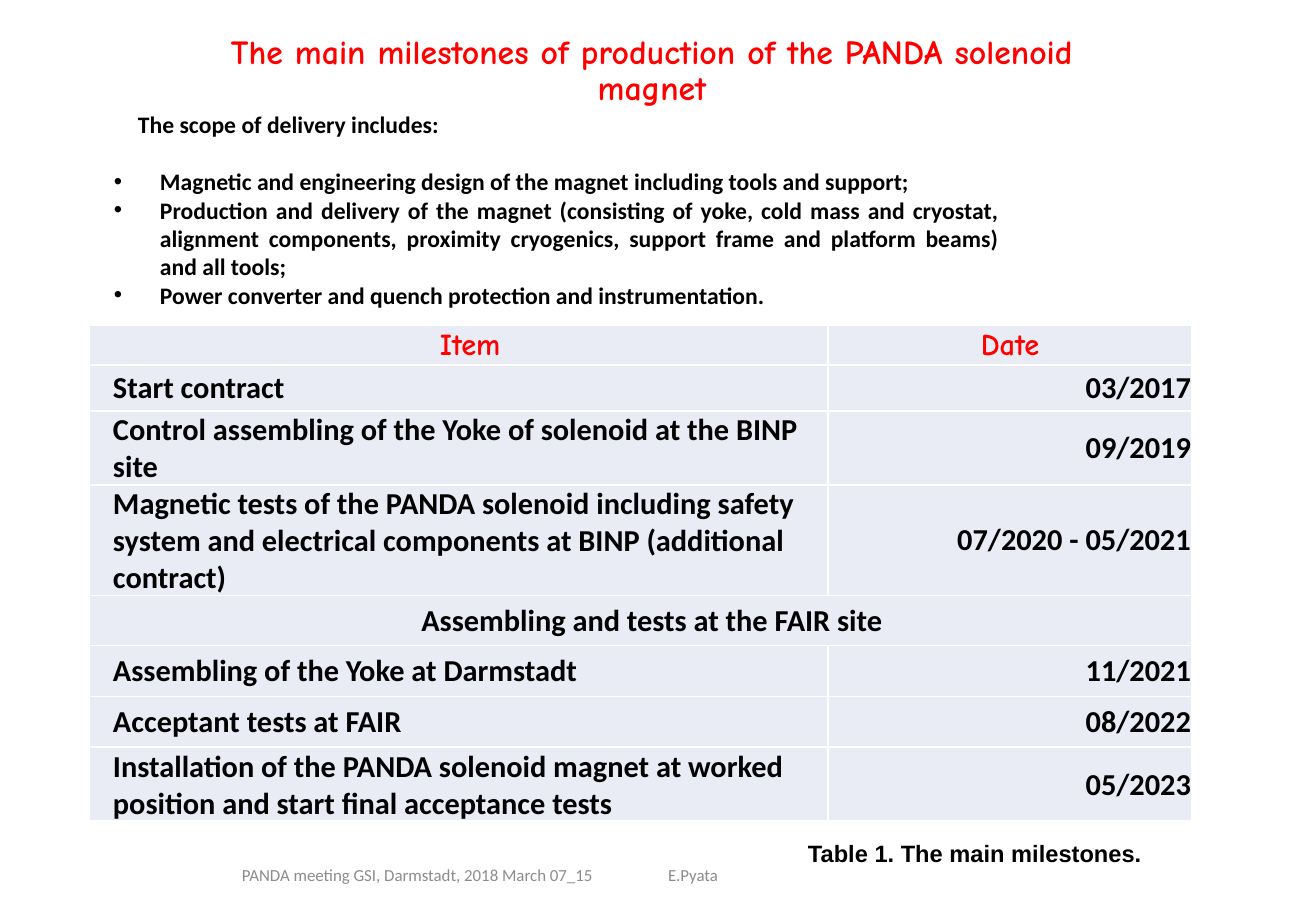
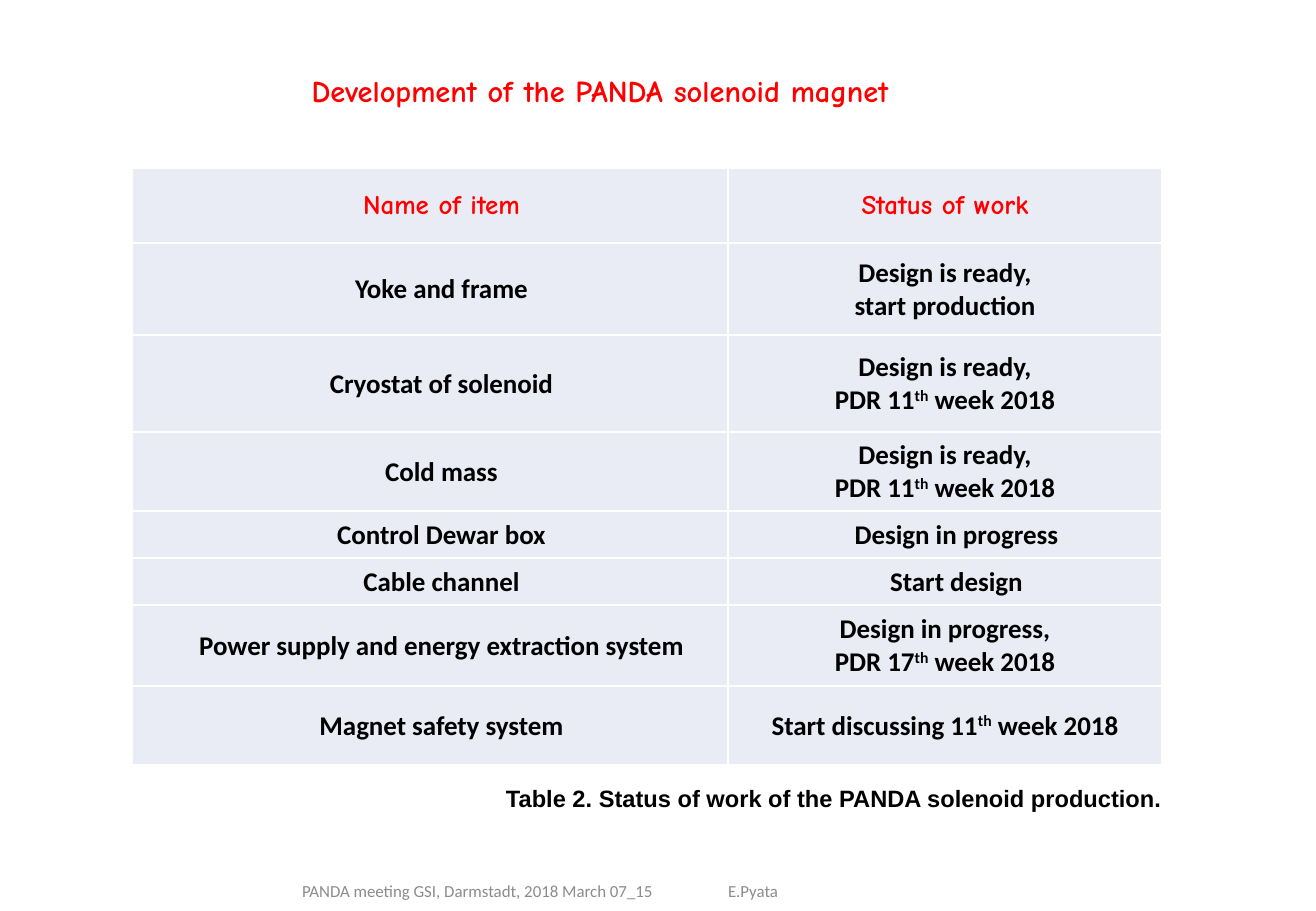
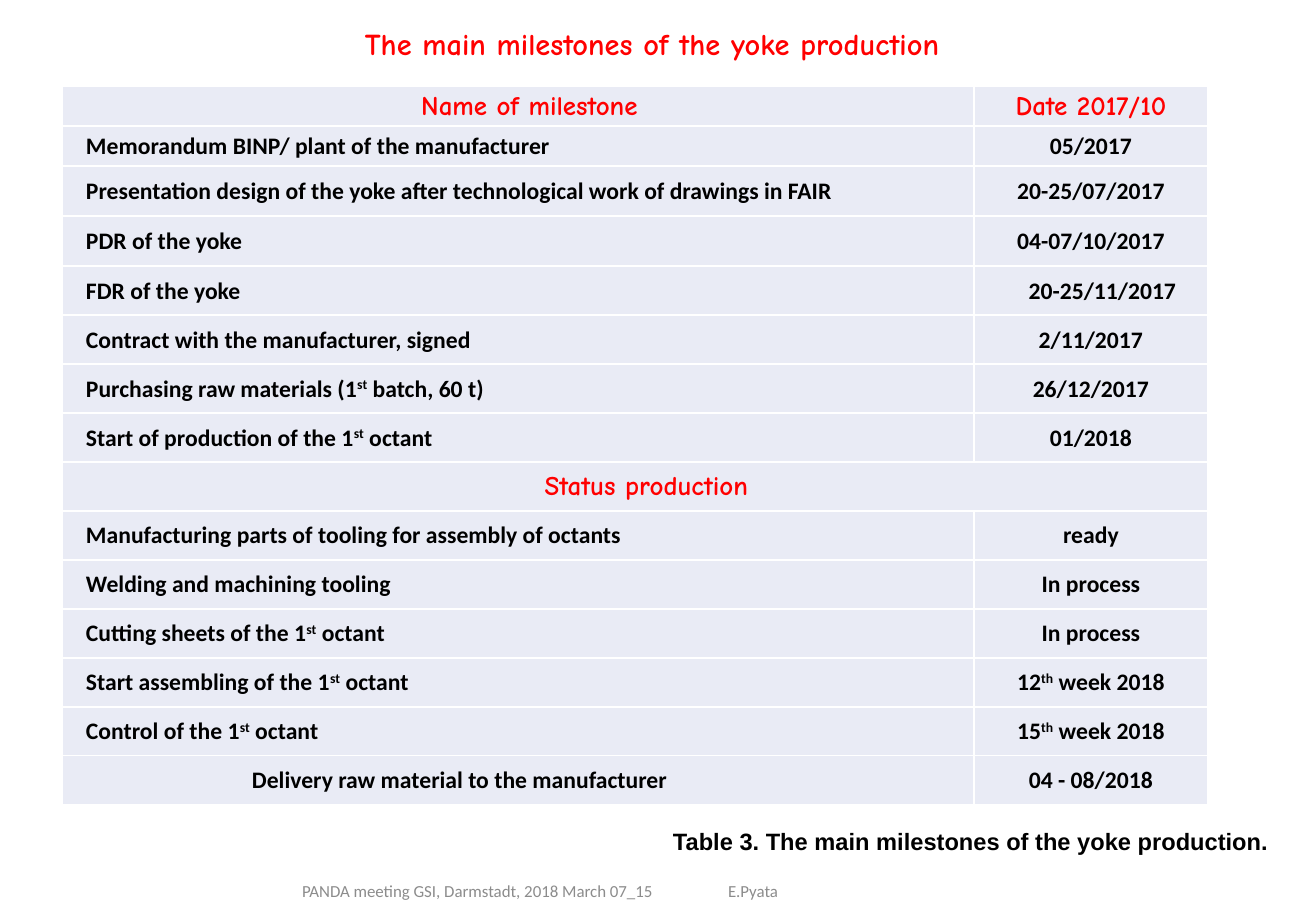
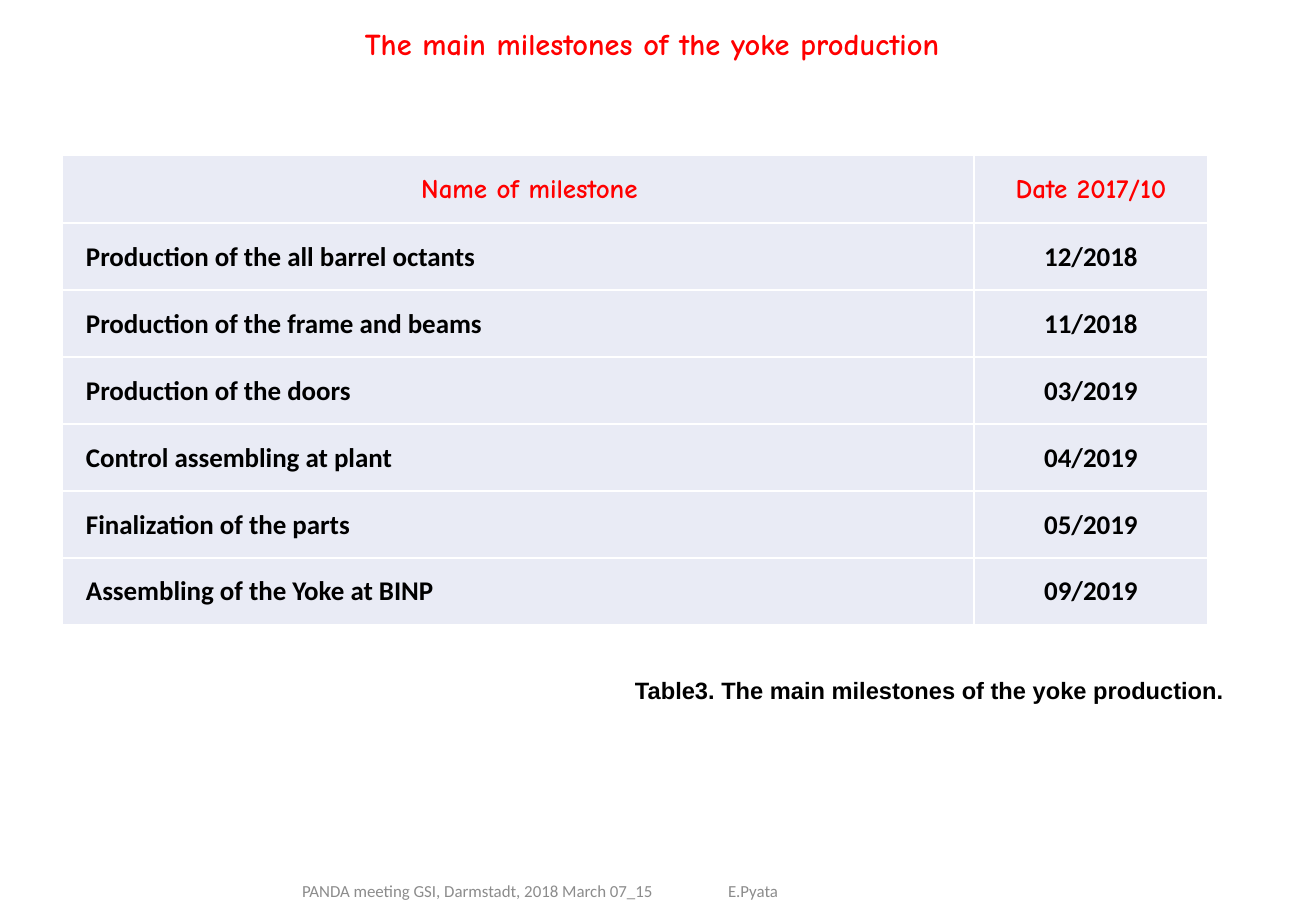
from dataclasses import dataclass

from lxml import etree
from pptx import Presentation
from pptx.dml.color import RGBColor
from pptx.enum.text import MSO_ANCHOR, PP_ALIGN
from pptx.oxml.ns import qn
from pptx.util import Pt

LEFT, CENTER, RIGHT, JUSTIFY = PP_ALIGN.LEFT, PP_ALIGN.CENTER, PP_ALIGN.RIGHT, PP_ALIGN.JUSTIFY
TOP, MIDDLE, BOTTOM = MSO_ANCHOR.TOP, MSO_ANCHOR.MIDDLE, MSO_ANCHOR.BOTTOM
PX = 914400 / 121.5


@dataclass(frozen=True)
class Theme:
    accent: str = "FF0000"
    ink: str = "000000"
    muted: str = "8C8C8C"
    cell: str = "E9EBF5"
    border: str = "FFFFFF"
    heading_font: str = "Comic Neue"
    body_font: str = "Calibri"
    caption_font: str = "Arial"
    large: int = 20
    title: int = 18
    table: int = 16
    text: int = 14
    footer: int = 10


THEME = Theme()


def emu(pixels):
    return round(pixels * PX)


def write(frame, text, font, size, color, align=LEFT, anchor=MIDDLE, bold=True):
    frame.vertical_anchor = anchor
    frame.text = text
    for paragraph in frame.paragraphs:
        parts = paragraph.text.split("^")
        paragraph.text = parts[0]
        for part in parts[1:]:
            paragraph.add_run().text = part
        paragraph.alignment = align
        for index, span in enumerate(paragraph.runs):
            span.font.name = font
            span.font.size = Pt(size)
            span.font.bold = bold
            span.font.color.rgb = RGBColor.from_string(color)
            if index % 2:
                span.font._element.set("baseline", "30000")


SCOPE = [
    "The scope of delivery includes:",
    "Magnetic and engineering design of the magnet including tools and support;",
    "Production and delivery of the magnet (consisting of yoke, cold mass and cryostat, "
    "alignment components, proximity cryogenics, support frame and platform beams) and all tools;",
    "Power converter and quench protection and instrumentation.",
]
YOKE_TITLE = "The main milestones of the yoke production"
YOKE_HEADER = ("Name of milestone", "Date 2017/10")
YOKE_COLUMNS = (912, 234)

PAGES = [
    {
        "title": "The main milestones of production of the PANDA solenoid magnet",
        "title_size": THEME.large,
        "title_box": (183, 19, 938, 95),
        "footer_at": (102, 854),
        "caption": "Table 1. The main milestones.",
        "caption_box": (796, 833, 360, 41),
        "table_at": (89, 325),
        "columns": (739, 364),
        "heights": (40, 46, 74, 110, 50, 51, 51, 74),
        "aligns": (LEFT, RIGHT),
        "sizes": (THEME.title, THEME.title),
        "rows": [
            ("Item", "Date"),
            ("Start contract", "03/2017"),
            ("Control assembling of the Yoke of solenoid at the BINP site", "09/2019"),
            ("Magnetic tests of the PANDA solenoid including safety system and electrical "
             "components at BINP (additional contract)", "07/2020 - 05/2021"),
            ("Assembling and tests at the FAIR site",),
            ("Assembling of the Yoke at Darmstadt", "11/2021"),
            ("Acceptant tests at FAIR", "08/2022"),
            ("Installation of the PANDA solenoid magnet at worked position "
             "and start final acceptance tests", "05/2023"),
        ],
    },
    {
        "title": "Development of the PANDA solenoid magnet",
        "title_box": (131, 66, 938, 49),
        "caption": "Table 2. Status of work of the PANDA solenoid production.",
        "caption_box": (494, 778, 683, 41),
        "table_at": (132, 168),
        "columns": (596, 434),
        "heights": (75, 92, 97, 79, 47, 47, 81, 79),
        "aligns": (CENTER, CENTER),
        "sizes": (THEME.table, THEME.table),
        "inset_rows": {4, 5},
        "rows": [
            ("Name of item", "Status of work"),
            ("Yoke and frame", "Design is ready,\nstart production"),
            ("Cryostat of solenoid", "Design is ready,\nPDR 11^th^ week 2018"),
            ("Cold mass", "Design is ready,\nPDR 11^th^ week 2018"),
            ("Control Dewar box", "Design in progress"),
            ("Cable channel", "Start design"),
            ("Power supply and energy extraction system",
             "Design in progress,\nPDR 17^th^ week 2018"),
            ("Magnet safety system", "Start discussing 11^th^ week 2018"),
        ],
    },
    {
        "title": YOKE_TITLE,
        "title_box": (183, 19, 938, 49),
        "caption": "Table 3. The main milestones of the yoke production.",
        "caption_box": (661, 821, 622, 41),
        "table_at": (62, 86),
        "columns": YOKE_COLUMNS,
        "heights": (40, 40, 50, 50) + (49,) * 11,
        "aligns": (LEFT, CENTER),
        "sizes": (THEME.table, THEME.text),
        "inset_rows": {4},
        "accent_rows": {0, 8},
        "indent_rows": {14},
        "rows": [
            YOKE_HEADER,
            ("Memorandum BINP/ plant of the manufacturer", "05/2017"),
            ("Presentation design of the yoke after technological work of drawings in FAIR",
             "20-25/07/2017"),
            ("PDR of the yoke", "04-07/10/2017"),
            ("FDR of the yoke", "20-25/11/2017"),
            ("Contract with the manufacturer, signed", "2/11/2017"),
            ("Purchasing raw materials (1^st^ batch, 60 t)", "26/12/2017"),
            ("Start of production of the 1^st^ octant", "01/2018"),
            ("Status production",),
            ("Manufacturing parts of tooling for assembly of octants", "ready"),
            ("Welding and machining tooling", "In process"),
            ("Cutting sheets of the 1^st^ octant", "In process"),
            ("Start assembling of the 1^st^ octant", "12^th^ week 2018"),
            ("Control of the 1^st^ octant", "15^th^ week 2018"),
            ("Delivery raw material to the manufacturer", "04 - 08/2018"),
        ],
    },
    {
        "title": YOKE_TITLE,
        "title_box": (183, 19, 938, 49),
        "caption": "Table3. The main milestones of the yoke production.",
        "caption_box": (623, 670, 622, 41),
        "table_at": (62, 155),
        "columns": YOKE_COLUMNS,
        "heights": (68,) + (67,) * 6,
        "aligns": (LEFT, CENTER),
        "sizes": (THEME.table, THEME.table),
        "rows": [
            YOKE_HEADER,
            ("Production of the all barrel octants", "12/2018"),
            ("Production of the frame and beams", "11/2018"),
            ("Production of the doors", "03/2019"),
            ("Control assembling at plant", "04/2019"),
            ("Finalization of the parts", "05/2019"),
            ("Assembling of the Yoke at BINP", "09/2019"),
        ],
    },
]

deck = Presentation()
deck.slide_width = emu(1316)
deck.slide_height = emu(911)

for number, content in enumerate(PAGES):
    page = deck.slides.add_slide(deck.slide_layouts[6])

    footer = page.shapes.add_textbox(
        *map(emu, content.get("footer_at", (162, 870)) + (757, 41))).text_frame
    footer.word_wrap = True
    footer.margin_left = emu(140)
    write(footer, "PANDA meeting GSI, Darmstadt, 2018 March 07_15\tE.Pyata",
          THEME.body_font, THEME.footer, THEME.muted, bold=False)
    tabs = etree.SubElement(footer.paragraphs[0]._p.get_or_add_pPr(), qn("a:tabLst"))
    etree.SubElement(tabs, qn("a:tab"), pos=str(emu(426)), algn="l")

    title = page.shapes.add_textbox(*map(emu, content["title_box"])).text_frame
    title.word_wrap = True
    write(title, content["title"], THEME.heading_font, content.get("title_size", THEME.title),
          THEME.accent, CENTER, BOTTOM)
    title.paragraphs[0].line_spacing = 0.9

    if number == 0:
        scope = page.shapes.add_textbox(*map(emu, (102, 104, 909, 213))).text_frame
        scope.word_wrap = True
        write(scope, "\n".join(SCOPE), THEME.body_font, THEME.text, THEME.ink, JUSTIFY, TOP)
        lead, *points = scope.paragraphs
        lead.space_after = Pt(17)
        lead._p.get_or_add_pPr().set("marL", str(emu(24)))
        for point in points:
            properties = point._p.get_or_add_pPr()
            properties.set("marL", str(emu(46)))
            properties.set("indent", str(emu(-46)))
            etree.SubElement(properties, qn("a:buFont"), typeface=THEME.caption_font)
            etree.SubElement(properties, qn("a:buChar"), char="•")

    columns, heights, rows = content["columns"], content["heights"], content["rows"]
    table = page.shapes.add_table(
        len(rows), len(columns),
        *map(emu, content["table_at"] + (sum(columns), sum(heights)))).table
    table.first_row = False
    table.horz_banding = False
    for column, width in zip(table.columns, columns):
        column.width = emu(width)
    for row_index, (height, values) in enumerate(zip(heights, rows)):
        table.rows[row_index].height = emu(height)
        section = len(values) == 1
        if section:
            table.cell(row_index, 0).merge(table.cell(row_index, 1))
        accent = row_index in content.get("accent_rows", {0})
        font = THEME.heading_font if accent else THEME.body_font
        color = THEME.accent if accent else THEME.ink
        size = content["sizes"][0 if accent else 1]
        for column_index in range(len(columns)):
            cell = table.cell(row_index, column_index)
            inset = column_index == 0 or row_index in content.get("inset_rows", ())
            cell.margin_left = emu(24 if inset else 1)
            cell.margin_right = cell.margin_top = emu(1)
            cell.margin_bottom = 0
            cell.vertical_anchor = MIDDLE
            for side in ("lnL", "lnR", "lnT", "lnB"):
                line = etree.SubElement(cell._tc.get_or_add_tcPr(), qn("a:" + side), w=str(Pt(1)))
                fill = etree.SubElement(line, qn("a:solidFill"))
                etree.SubElement(fill, qn("a:srgbClr"), val=THEME.border)
            cell.fill.solid()
            cell.fill.fore_color.rgb = RGBColor.from_string(THEME.cell)
            if column_index < len(values):
                align = CENTER if accent or section else content["aligns"][column_index]
                write(cell.text_frame, values[column_index], font, size, color, align)
        if row_index in content.get("indent_rows", ()):
            first = table.cell(row_index, 0).text_frame.paragraphs[0]
            first._p.get_or_add_pPr().set("indent", str(emu(166)))

    caption = page.shapes.add_textbox(*map(emu, content["caption_box"])).text_frame
    caption.word_wrap = False
    write(caption, content["caption"], THEME.caption_font, THEME.text, THEME.ink, anchor=TOP)

deck.save("out.pptx")
